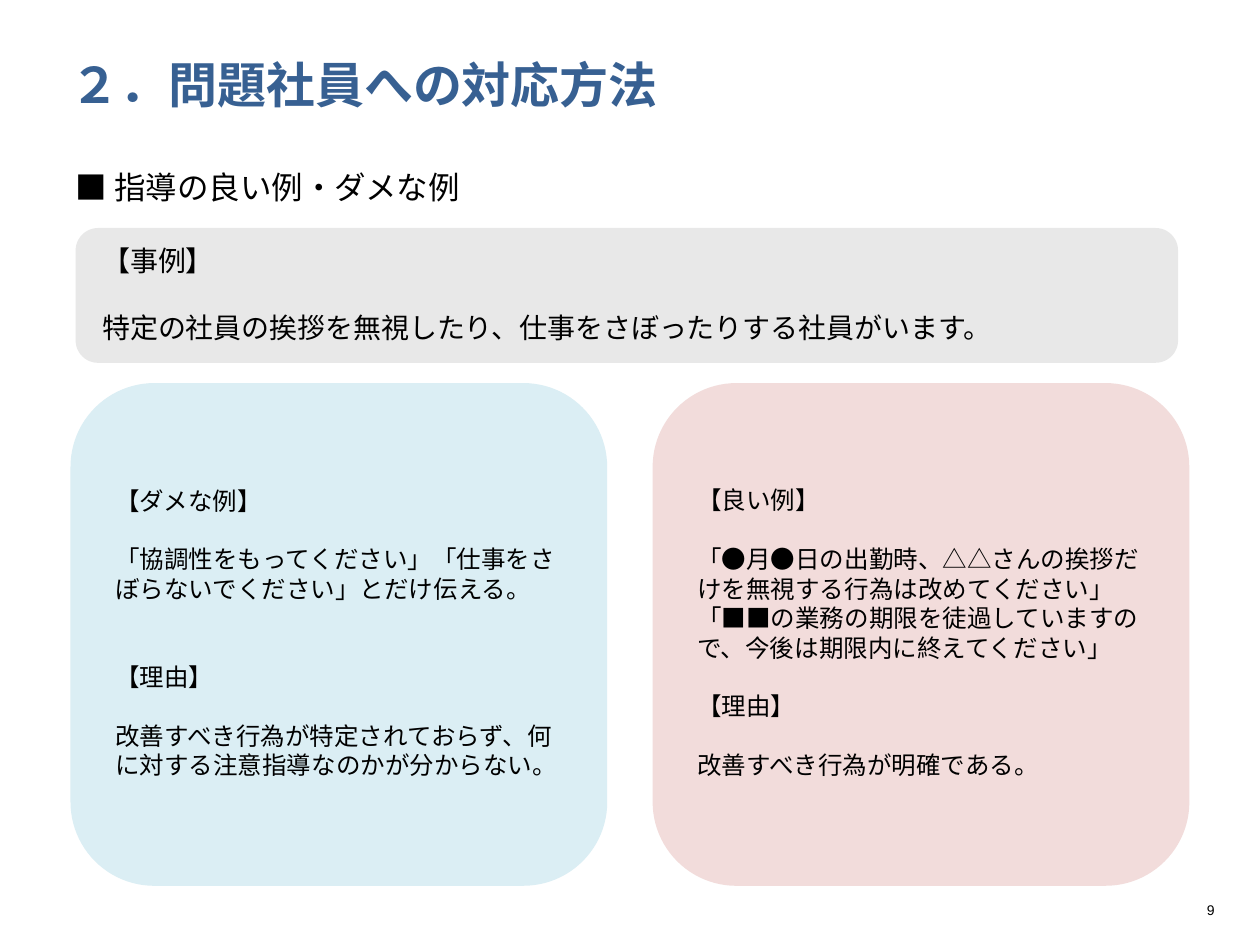
from dataclasses import dataclass

from pptx import Presentation
from pptx.dml.color import RGBColor
from pptx.enum.shapes import MSO_SHAPE
from pptx.enum.text import MSO_ANCHOR, PP_ALIGN
from pptx.oxml.ns import qn
from pptx.util import Inches, Pt


@dataclass(frozen=True)
class Theme:
    japanese: str = "Noto Sans CJK JP"
    latin: str = "Arial"
    title: str = "376092"
    ink: str = "000000"
    case: str = "E8E8E8"
    bad: str = "DBEEF4"
    good: str = "F2DCDB"
    title_size: int = 28
    heading_size: int = 18
    case_size: int = 16
    example_size: int = 14
    number_size: int = 8
    leading: float = 1.2


class SlideBuilder:
    def __init__(self, deck, theme):
        self.theme = theme
        self.page = deck.slides.add_slide(deck.slide_layouts[6])

    def fill_text(self, box, lines, size, color=None, font=None, bold=False,
                  align=PP_ALIGN.LEFT, anchor=MSO_ANCHOR.TOP,
                  insets=(0, 0, 0, 0), wrap=True, spread=1):
        """Each line is a pair: its text and the number of lines left free above it."""
        font = font or self.theme.japanese
        frame = box.text_frame
        left, top, right, bottom = map(Inches, insets)
        frame_format = {
            "word_wrap": wrap, "vertical_anchor": anchor,
            "margin_left": left, "margin_top": top,
            "margin_right": right, "margin_bottom": bottom,
        }
        for name, value in frame_format.items():
            setattr(frame, name, value)

        pitch = size * self.theme.leading * spread
        font_format = {"name": font, "size": Pt(size), "bold": bold}
        for index, (text, gap) in enumerate(lines):
            para = frame.add_paragraph() if index else frame.paragraphs[0]
            para_format = {
                "alignment": align, "line_spacing": Pt(pitch),
                "space_before": Pt(gap * pitch), "space_after": Pt(0),
            }
            for name, value in para_format.items():
                setattr(para, name, value)
            span = para.add_run()
            span.text = text
            for name, value in font_format.items():
                setattr(span.font, name, value)
            span.font.color.rgb = RGBColor.from_string(color or self.theme.ink)
            # East Asian characters take their typeface from a:ea
            properties = span.font._element
            properties.append(properties.makeelement(qn("a:ea"), {"typeface": font}))

    def text(self, place, text, size, **style):
        box = self.page.shapes.add_textbox(*map(Inches, place))
        self.fill_text(box, [(text, 0)], size, **style)

    def panel(self, place, fill, lines, size):
        box = self.page.shapes.add_shape(MSO_SHAPE.ROUNDED_RECTANGLE, *map(Inches, place))
        box.shadow.inherit = False
        box.fill.solid()
        box.fill.fore_color.rgb = RGBColor.from_string(fill)
        box.line.fill.background()
        self.fill_text(box, lines, size, anchor=MSO_ANCHOR.MIDDLE,
                       insets=(0.16, 0, 0.16, 0.03))


def main():
    deck = Presentation()
    deck.slide_width, deck.slide_height = Inches(10), Inches(7.5)
    theme = Theme()
    slide = SlideBuilder(deck, theme)

    # Title, page number and heading
    slide.text((0.56, 0.47, 8.89, 0.43), "２．問題社員への対応方法", theme.title_size,
               color=theme.title, bold=True, anchor=MSO_ANCHOR.BOTTOM)
    slide.text((9.35, 7.11, 0.29, 0.22), "9", theme.number_size, font=theme.latin,
               align=PP_ALIGN.RIGHT, anchor=MSO_ANCHOR.MIDDLE, wrap=False)
    slide.text((0.6, 1.26, 8.89, 0.55), "■ 指導の良い例・ダメな例", theme.heading_size,
               align=PP_ALIGN.JUSTIFY, spread=1.25)

    # Case
    case = [
        ("【事例】", 0),
        ("特定の社員の挨拶を無視したり、仕事をさぼったりする社員がいます。", 1),
    ]
    slide.panel((0.6, 1.81, 8.75, 1.07), theme.case, case, theme.case_size)

    # Bad and good examples side by side
    bad = [
        ("【ダメな例】", 0),
        ("「協調性をもってください」「仕事をさぼらないでください」とだけ伝える。", 1),
        ("【理由】", 2),
        ("改善すべき行為が特定されておらず、何に対する注意指導なのかが分からない。", 1),
    ]
    good = [
        ("【良い例】", 0),
        ("「●月●日の出勤時、△△さんの挨拶だけを無視する行為は改めてください」", 1),
        ("「■■の業務の期限を徒過していますので、今後は期限内に終えてください」", 0),
        ("【理由】", 1),
        ("改善すべき行為が明確である。", 1),
    ]
    width, gutter = 4.26, 0.36
    for column, (fill, lines) in enumerate([(theme.bad, bad), (theme.good, good)]):
        left = 0.56 + column * (width + gutter)
        slide.panel((left, 3.04, width, 3.99), fill, lines, theme.example_size)

    deck.save("out.pptx")


if __name__ == "__main__":
    main()
